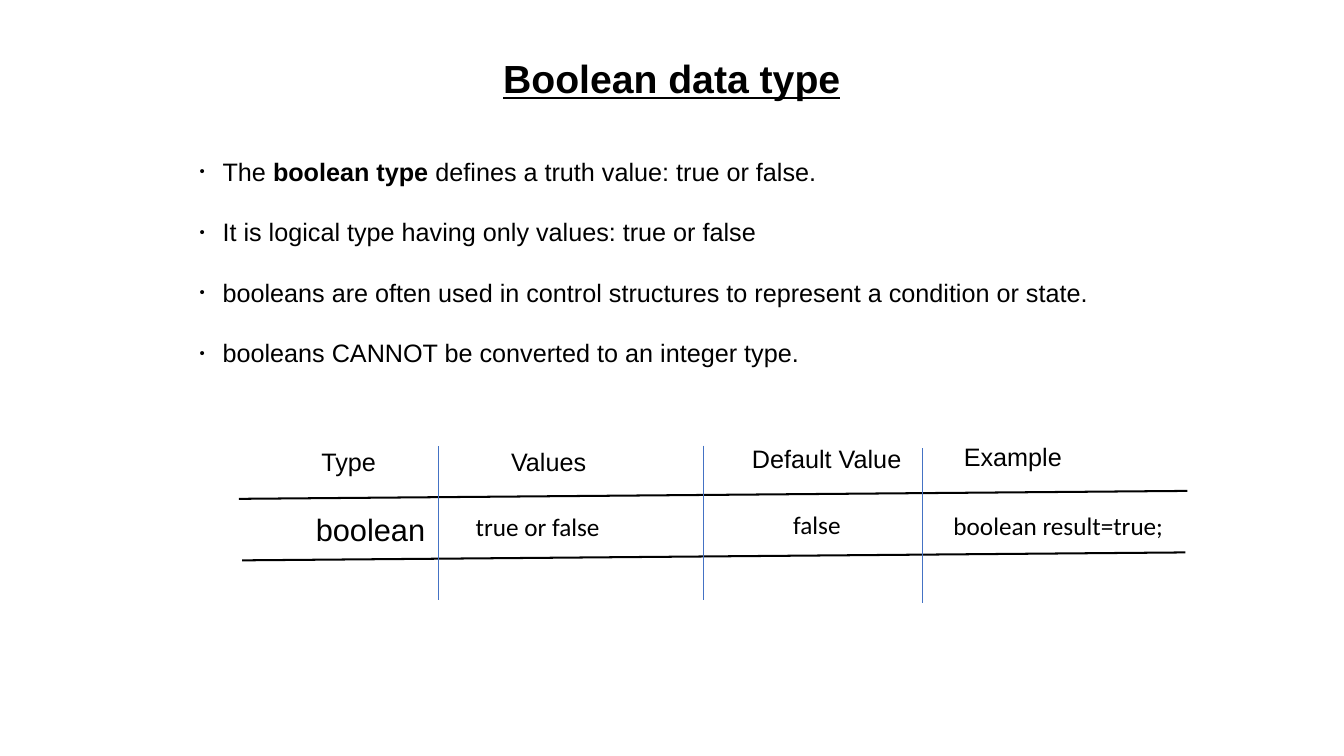
from pptx import Presentation
from pptx.dml.color import RGBColor
from pptx.enum import shapes, text
from pptx.oxml import parse_xml
from pptx.oxml.ns import nsdecls
from pptx.util import Cm, Pt

BLACK, BLUE = "000000", "4472C4"
TITLE = "Boolean data type"
# Each bullet is a list of (text, bold) runs.
BULLETS = [
    [("The ", False), ("boolean type ", True),
     ("defines a truth value: true or false.", False)],
    [("It is logical type having only values: true or false", False)],
    [("booleans are often used in control structures to represent "
      "a condition or state.", False)],
    [("booleans CANNOT be converted to an integer type.", False)],
]
# text, left, top, width (cm), font, size
CELLS = [
    ("Type", 8.1, 11.25, 1.88, "Arial", 18),
    ("Values", 12.88, 11.25, 2.1, "Arial", 18),
    ("Default Value", 18.95, 11.18, 4, "Arial", 18),
    ("Example", 24.29, 11.13, 2.7, "Arial", 18),
    ("boolean", 7.96, 12.87, 2.95, "Arial", 22),
    ("true or false", 11.99, 12.88, 3.5, "Calibri", 18),
    ("false", 19.99, 12.83, 1.5, "Calibri", 18),
    ("boolean result=true;", 24.03, 12.86, 5.8, "Calibri", 18),
]
# x1, y1, x2, y2 (cm)
ROW_RULES = [(6.02, 12.57, 29.92, 12.37), (6.1, 14.12, 29.87, 13.92)]
COLUMN_RULES = [(11.05, 11.25, 11.05, 15.11), (17.73, 11.23, 17.73, 15.11),
                (23.24, 11.3, 23.24, 15.19)]


def paint(target, colour):
    target.rgb = RGBColor.from_string(colour)


def add_box(s, left, top, width, height, wrap=False):
    tf = s.shapes.add_textbox(Cm(left), Cm(top), Cm(width), Cm(height)).text_frame
    frame = dict(margin_left=0, margin_top=0, margin_right=0, margin_bottom=0,
                 word_wrap=wrap, vertical_anchor=text.MSO_ANCHOR.TOP)
    for name, value in frame.items():
        setattr(tf, name, value)
    return tf


def add_run(p, words, font="Arial", size=18, **style):
    r = p.add_run()
    r.text = words
    for name, value in dict(name=font, size=Pt(size), **style).items():
        setattr(r.font, name, value)
    paint(r.font.color, BLACK)


def add_bullet(p):
    """Give the paragraph a hanging indent and a small black bullet."""
    pPr = p._p.get_or_add_pPr()
    indent = Cm(0.58)
    pPr.set("marL", str(indent))
    pPr.set("indent", str(-indent))
    for xml in (f'<a:buClr {nsdecls("a")}><a:srgbClr val="{BLACK}"/></a:buClr>',
                f'<a:buSzPct {nsdecls("a")} val="59000"/>',
                f'<a:buFont {nsdecls("a")} typeface="Arial"/>',
                f'<a:buChar {nsdecls("a")} char="•"/>'):
        pPr.append(parse_xml(xml))


def add_rule(s, ends, colour, weight):
    line = s.shapes.add_connector(shapes.MSO_CONNECTOR.STRAIGHT, *map(Cm, ends))
    paint(line.line.color, colour)
    line.line.width = Pt(weight)
    line._element.spPr.append(parse_xml(f'<a:effectLst {nsdecls("a")}/>'))


def main():
    prs = Presentation()
    prs.slide_width, prs.slide_height = Cm(33.87), Cm(19.05)
    s = prs.slides.add_slide(prs.slide_layouts[6])

    title = add_box(s, 12.68, 1.37, 9.5, 1.19, wrap=True)
    add_run(title.paragraphs[0], TITLE, size=28, bold=True, underline=True)

    body = add_box(s, 5.03, 3.94, 23.42, 5.38, wrap=True)
    for i, runs in enumerate(BULLETS):
        p = body.add_paragraph() if i else body.paragraphs[0]
        if i:
            p.space_before = Pt(21.6)
        add_bullet(p)
        for words, bold in runs:
            add_run(p, words, bold=bold)

    for words, left, top, width, font, size in CELLS:
        tf = add_box(s, left, top, width, size * 0.043)
        add_run(tf.paragraphs[0], words, font, size)

    for ends in ROW_RULES:
        add_rule(s, ends, BLACK, 1.45)
    for ends in COLUMN_RULES:
        add_rule(s, ends, BLUE, 0.5)

    prs.save("out.pptx")


if __name__ == "__main__":
    main()
